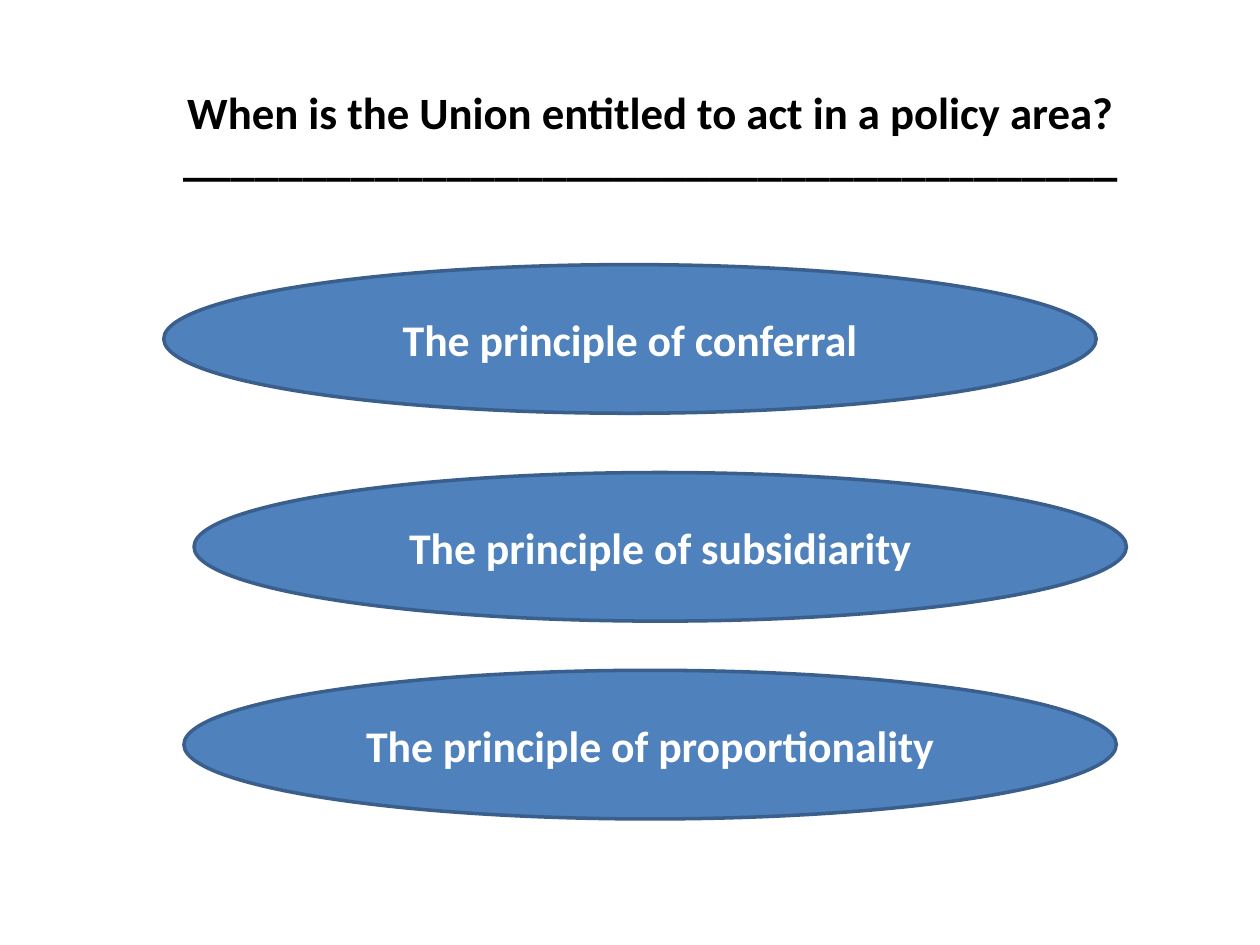
from dataclasses import dataclass

from pptx import Presentation, util as u
from pptx.dml.color import RGBColor
from pptx.enum import shapes, text


@dataclass(frozen=True)
class Theme:
    font: str = "Calibri"
    ink: str = "000000"
    light: str = "FFFFFF"
    fill: str = "4F81BD"
    edge: str = "3A5F8C"
    head: float = 25.6
    rule: float = 27.5
    body: float = 25


theme = Theme()
deck = Presentation()
deck.slide_width, deck.slide_height = u.Inches(10), u.Inches(7.5)
wide, high = deck.slide_width / 100, deck.slide_height / 100
slide = deck.slides.add_slide(deck.slide_layouts[6])


def place(x, y, w, h):
    """Turn percent shares of the slide into lengths."""
    return int(x * wide), int(y * high), int(w * wide), int(h * high)


def write(shape, runs, color):
    """Fill a shape with one centred bold paragraph of (words, size) runs."""
    frame = shape.text_frame
    frame.word_wrap = True
    frame.vertical_anchor = text.MSO_ANCHOR.MIDDLE
    para = frame.paragraphs[0]
    para.alignment = text.PP_ALIGN.CENTER
    for words, size in runs:
        run = para.add_run()
        run.text = words
        run.font.name = theme.font
        run.font.size = u.Pt(size)
        run.font.bold = True
        run.font.color.rgb = RGBColor.from_string(color)
    return para


title = slide.shapes.add_textbox(*place(9.1, 4.8, 85, 20))
para = write(title, [
    ("When is the Union entitled to act in a policy area? ", theme.head),
    ("_" * 39, theme.rule),
], theme.ink)
para.line_spacing = 0.8

rules = [
    ("conferral", 13, 28),
    ("subsidiarity", 15.4, 50),
    ("proportionality", 14.6, 70.93),
]
for name, left, top in rules:
    oval = slide.shapes.add_shape(
        shapes.MSO_SHAPE.OVAL, *place(left, top, 74, 15.73))
    oval.shadow.inherit = False
    oval.fill.solid()
    oval.fill.fore_color.rgb = RGBColor.from_string(theme.fill)
    oval.line.color.rgb = RGBColor.from_string(theme.edge)
    oval.line.width = u.Pt(2)
    write(oval, [(f"The principle of {name}", theme.body)], theme.light)

deck.save("out.pptx")
